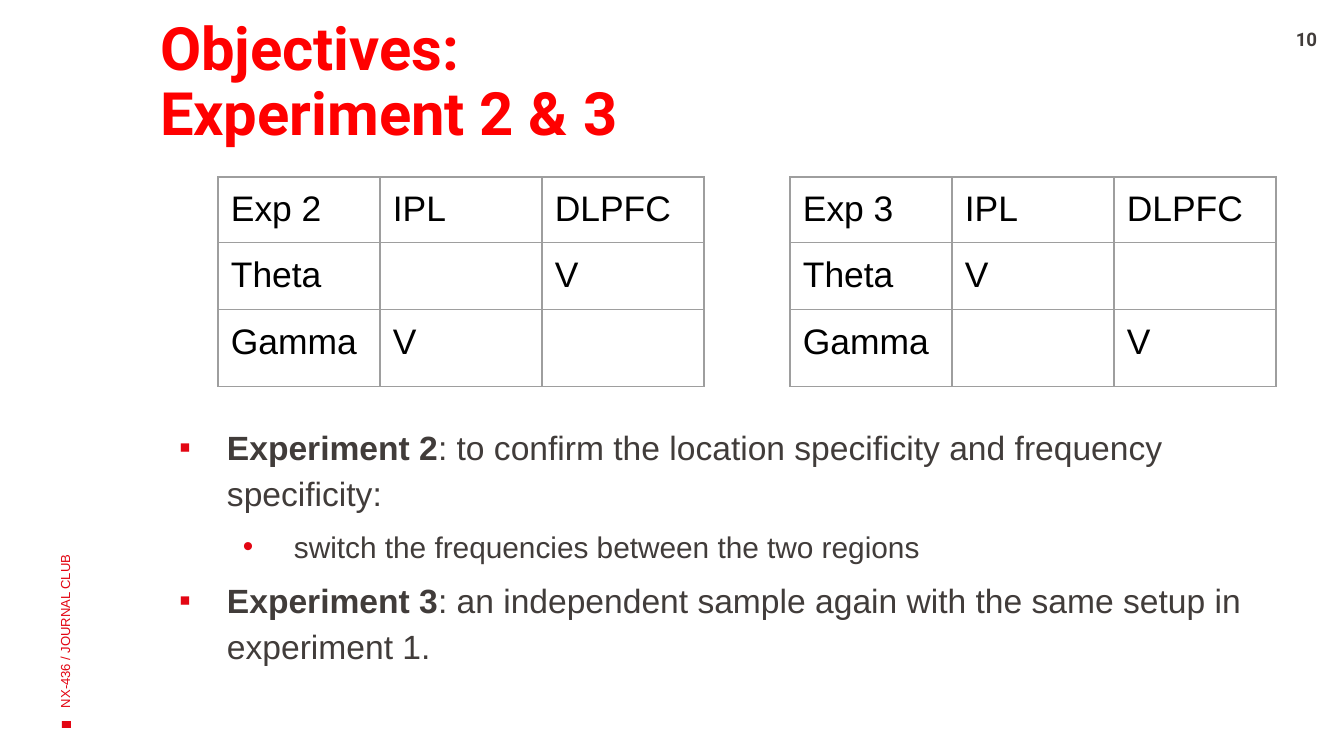
from dataclasses import dataclass

from lxml.etree import SubElement
from pptx import Presentation
from pptx.dml.color import RGBColor as RGB
from pptx.enum.shapes import MSO_SHAPE as Shape
from pptx.enum.text import MSO_ANCHOR as Anchor, MSO_AUTO_SIZE as AutoSize, PP_ALIGN as Align
from pptx.oxml.ns import qn
from pptx.util import Emu, Pt

EMU_PER_PX = 914400 / 134.4


@dataclass(frozen=True)
class Theme:
    title_font: str = "Roboto"
    body_font: str = "Arial"
    title: str = "FF0000"
    accent: str = "E30613"
    text: str = "413C3A"
    cell: str = "000000"
    border: str = "9E9E9E"
    title_size: int = 32
    cell_size: int = 19
    body_sizes: tuple = (18, 16)
    number_size: int = 10
    footer_size: int = 7
    border_width: float = 0.75


THEME = Theme()


def px(value):
    return Emu(round(value * EMU_PER_PX))


def set_values(target, values):
    for name, value in values.items():
        setattr(target, name, value)


def place(shape, box):
    set_values(shape, dict(zip(("left", "top", "width", "height"), map(px, box))))


def set_frame(frame, margins, anchor=Anchor.TOP):
    names = ("margin_left", "margin_top", "margin_right", "margin_bottom")
    set_values(frame, dict(zip(names, map(px, margins))))
    set_values(frame, {"word_wrap": True, "auto_size": AutoSize.NONE, "vertical_anchor": anchor})


def add_run(paragraph, text, font, size, color, bold=False):
    run = paragraph.add_run()
    run.text = text
    set_values(run.font, {"name": font, "size": Pt(size), "bold": bold})
    run.font.color.rgb = RGB.from_string(color)


def add_color(parent, color):
    SubElement(parent, qn("a:srgbClr"), val=color)


def add_bullet(paragraph, symbol, left, indent):
    properties = paragraph._p.get_or_add_pPr()
    properties.set("marL", str(px(left)))
    properties.set("indent", str(px(indent)))
    add_color(SubElement(properties, qn("a:buClr")), THEME.accent)
    SubElement(properties, qn("a:buFont"), typeface=THEME.body_font)
    SubElement(properties, qn("a:buChar"), char=symbol)


def add_title(slide, box, text):
    title = slide.shapes.title
    place(title, box)
    set_frame(title.text_frame, (27, 0, 11, 7))
    paragraph = title.text_frame.paragraphs[0]
    set_values(paragraph, {"alignment": Align.LEFT, "line_spacing": 0.9})
    add_run(paragraph, text, THEME.title_font, THEME.title_size, THEME.title, True)


def add_number(slide, box, text):
    frame = slide.shapes.add_textbox(*map(px, box)).text_frame
    set_frame(frame, (13, 0, 13, 0))
    frame.paragraphs[0].alignment = Align.CENTER
    add_run(frame.paragraphs[0], text, THEME.title_font, THEME.number_size, THEME.text, True)


def add_footer(slide, box, text):
    """Vertical line of text that reads upwards, above a small square."""
    left, top, width, height = box
    # A rotated shape is placed by its unrotated box around the same centre
    unrotated = (left + (width - height) / 2, top + (height - width) / 2, height, width)
    label = slide.shapes.add_textbox(*map(px, unrotated))
    label.rotation = 270
    set_frame(label.text_frame, (13, 7, 13, 7), Anchor.MIDDLE)
    add_run(label.text_frame.paragraphs[0], text, THEME.body_font, THEME.footer_size, THEME.accent)

    marker_width, marker_height = 7, 9
    marker = slide.shapes.add_shape(
        Shape.RECTANGLE, px(left + width / 2 - 2), px(top + height - 1),
        px(marker_width), px(marker_height))
    marker.rotation = 270
    marker.shadow.inherit = False
    marker.fill.solid()
    marker.fill.fore_color.rgb = RGB.from_string(THEME.accent)
    marker.line.fill.background()


def add_cell_borders(cell):
    properties = cell._tc.get_or_add_tcPr()
    for position, side in enumerate(("lnL", "lnR", "lnT", "lnB")):
        line = SubElement(properties, qn(f"a:{side}"), w=str(Pt(THEME.border_width)))
        add_color(SubElement(line, qn("a:solidFill")), THEME.border)
        properties.insert(position, line)


def add_condition_table(slide, box, rows):
    row_heights = (59, 59, 77)
    table = slide.shapes.add_table(len(rows), len(rows[0]), *map(px, box)).table
    set_values(table, {"first_row": False, "horz_banding": False})
    for column in table.columns:
        column.width = px(box[2] / len(rows[0]))
    for row, height, texts in zip(table.rows, row_heights, rows):
        row.height = px(height)
        for cell, text in zip(row.cells, texts):
            margins = ("margin_left", "margin_top", "margin_right", "margin_bottom")
            set_values(cell, dict.fromkeys(margins, px(13)))
            cell.fill.background()
            add_cell_borders(cell)
            if text:
                add_run(cell.text_frame.paragraphs[0], text,
                        THEME.body_font, THEME.cell_size, THEME.cell)


def add_objectives(slide, box, items):
    bullets = (("▪", 67, -48), ("•", 134, -51))
    frame = slide.shapes.add_textbox(*map(px, box)).text_frame
    set_frame(frame, (27, 7, 13, 7))
    for index, (level, lead, text) in enumerate(items):
        paragraph = frame.add_paragraph() if index else frame.paragraphs[0]
        add_bullet(paragraph, *bullets[level])
        set_values(paragraph, {"level": level, "line_spacing": 1.15,
                               "space_before": Pt(5 if index else 0)})
        style = (THEME.body_font, THEME.body_sizes[level], THEME.text)
        if lead:
            add_run(paragraph, lead, *style, True)
        add_run(paragraph, text, *style)


def main():
    presentation = Presentation()
    set_values(presentation, {"slide_width": px(1344), "slide_height": px(756)})
    slide = presentation.slides.add_slide(presentation.slide_layouts[5])

    # Heading and page furniture
    add_title(slide, (133, 19, 539, 157), "Objectives: Experiment 2 & 3")
    add_number(slide, (1269, 28, 75, 24), "10")
    add_footer(slide, (-2, 230, 134, 491), "NX-436 / JOURNAL CLUB")

    # Frequency and region in each experiment
    conditions = (
        ("Exp 2", ("", "V"), ("V", "")),
        ("Exp 3", ("V", ""), ("", "V")),
    )
    for index, (name, theta, gamma) in enumerate(conditions):
        rows = ((name, "IPL", "DLPFC"), ("Theta", *theta), ("Gamma", *gamma))
        add_condition_table(slide, (218 + index * 572, 177, 486, 195), rows)

    # Explanation
    add_objectives(slide, (133, 414, 1136, 306), (
        (0, "Experiment 2", ": to confirm the location specificity and frequency specificity:"),
        (1, "", "switch the frequencies between the two regions"),
        (0, "Experiment 3", ": an independent sample again with the same setup in experiment 1."),
    ))
    presentation.save("out.pptx")


if __name__ == "__main__":
    main()
